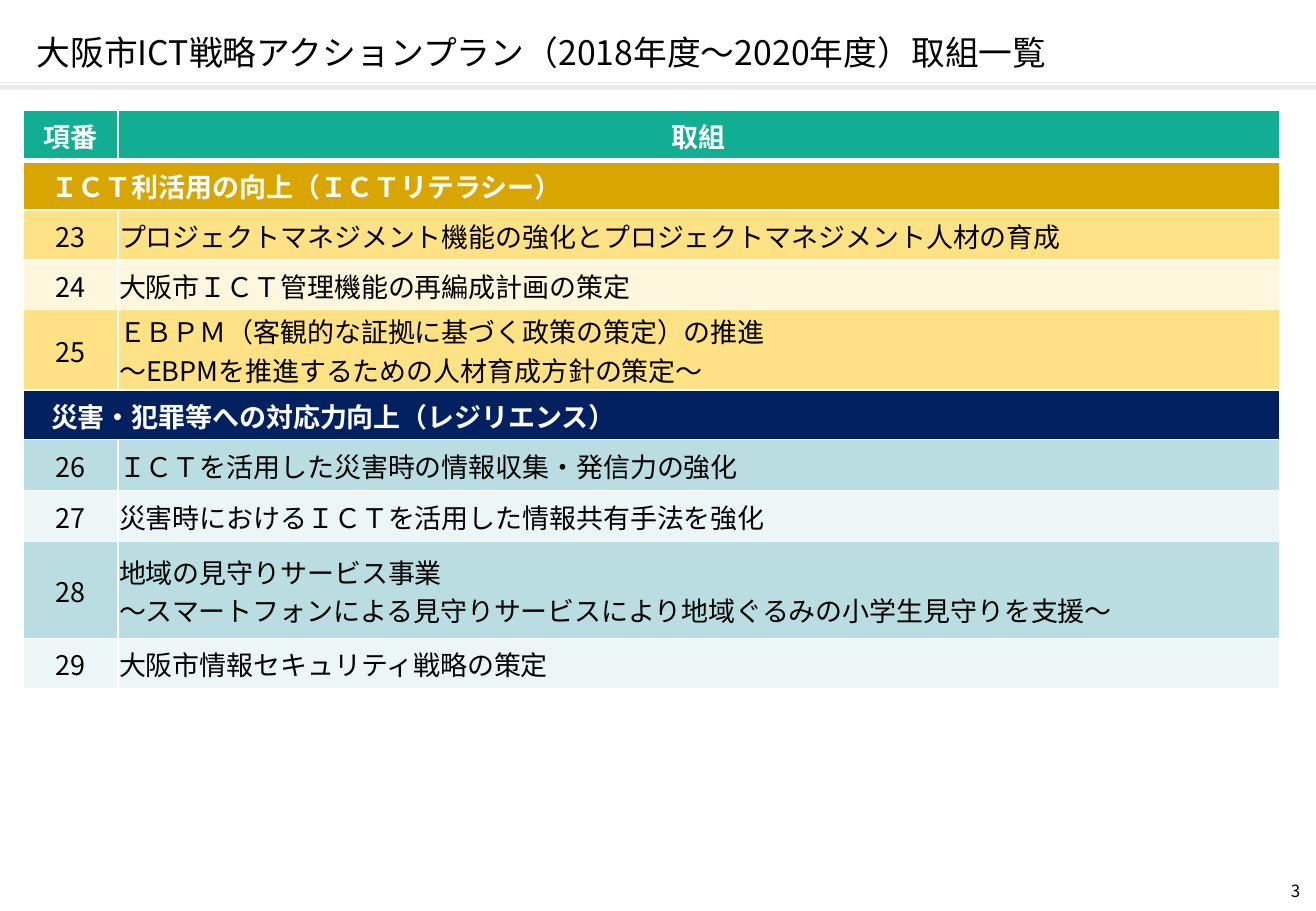
from lxml import etree
from pptx import Presentation
from pptx import util as u
from pptx.dml.color import RGBColor
from pptx.enum import shapes, text
from pptx.oxml import ns

FONT = "Noto Sans CJK JP"
YELLOWS = ("FFE285", "FFF7DD")
BLUES = ("BADDE1", "EDF6F7")
ROW_HEIGHTS = [0.41, 0.41, 0.41, 0.41, 0.66, 0.41, 0.42, 0.42, 0.8, 0.41]
SECTIONS = [
    ("ＩＣＴ利活用の向上（ＩＣＴリテラシー）", "D9A601", YELLOWS, [
        "プロジェクトマネジメント機能の強化とプロジェクトマネジメント人材の育成",
        "大阪市ＩＣＴ管理機能の再編成計画の策定",
        "ＥＢＰＭ（客観的な証拠に基づく政策の策定）の推進\n"
        "～EBPMを推進するための人材育成方針の策定～",
    ]),
    ("災害・犯罪等への対応力向上（レジリエンス）", "002060", BLUES, [
        "ＩＣＴを活用した災害時の情報収集・発信力の強化",
        "災害時におけるＩＣＴを活用した情報共有手法を強化",
        "地域の見守りサービス事業\n"
        "～スマートフォンによる見守りサービスにより地域ぐるみの小学生見守りを支援～",
        "大阪市情報セキュリティ戦略の策定",
    ]),
]


def rgb(value):
    """Turn a hex string into a colour."""
    return RGBColor.from_string(value)


def write(frame, content, size=16, color="000000", bold=False, align="LEFT"):
    """Fill a text frame, one paragraph for each line of the content."""
    frame.word_wrap = True
    frame.text = content
    for paragraph in frame.paragraphs:
        paragraph.alignment = getattr(text.PP_ALIGN, align)
        for run in paragraph.runs:
            run.font.name = FONT
            run.font.size = u.Pt(size)
            run.font.bold = bold
            run.font.color.rgb = rgb(color)
            east_asian = etree.SubElement(run.font._element, ns.qn("a:ea"))
            east_asian.set("typeface", FONT)


def set_insets(holder, left=0, top=0, right=0, bottom=0):
    """Set the inner margins of a text frame or cell."""
    holder.margin_left, holder.margin_top = u.Inches(left), u.Inches(top)
    holder.margin_right, holder.margin_bottom = u.Inches(right), u.Inches(bottom)


def add_borders(cell, **widths):
    """Give a cell white borders, one point wide unless stated by side."""
    properties = cell._tc.get_or_add_tcPr()
    for index, side in enumerate("LRTB"):
        border = etree.Element(ns.qn(f"a:ln{side}"), w=str(u.Pt(widths.get(side, 1))))
        fill = etree.SubElement(border, ns.qn("a:solidFill"))
        etree.SubElement(fill, ns.qn("a:srgbClr"), val="FFFFFF")
        properties.insert(index, border)


def fill_cell(cell, content, fill, left=0.01, borders=None, **style):
    """Write and colour one table cell."""
    write(cell.text_frame, content, **style)
    cell.vertical_anchor = text.MSO_ANCHOR.MIDDLE
    set_insets(cell, left, 0.01, 0.01)
    cell.fill.solid()
    cell.fill.fore_color.rgb = rgb(fill)
    add_borders(cell, **(borders or {}))


def add_heading(slide, left, top, width, height):
    """Place the title and the double rule below it."""
    rule_y = u.Inches(top + height)
    rule = slide.shapes.add_connector(
        shapes.MSO_CONNECTOR.STRAIGHT, u.Inches(left), rule_y, u.Inches(left + width), rule_y)
    rule.line.color.rgb = rgb("EAEAEA")
    rule.line.width = u.Pt(0.75)
    etree.SubElement(rule._element.spPr, ns.qn("a:effectLst"))

    band = slide.shapes.add_shape(
        shapes.MSO_SHAPE.RECTANGLE, u.Inches(left), u.Inches(top + height + 0.02),
        u.Inches(width), u.Inches(0.04))
    band.shadow.inherit = False
    band.fill.solid()
    band.fill.fore_color.rgb = rgb("EAEAEA")
    band.line.fill.background()

    title = slide.shapes.title
    title.left, title.top = u.Inches(left + 0.3), u.Inches(top + 0.21)
    title.width, title.height = u.Inches(9.92), u.Inches(0.43)
    frame = title.text_frame
    write(frame, "大阪市ICT戦略アクションプラン（2018年度～2020年度）取組一覧", size=20)
    set_insets(frame)
    frame.auto_size = text.MSO_AUTO_SIZE.NONE
    frame.vertical_anchor = text.MSO_ANCHOR.MIDDLE


def add_initiatives(slide, left, top, width, height):
    """Place the table of initiatives, grouped by section."""
    table = slide.shapes.add_table(
        len(ROW_HEIGHTS), 2, u.Inches(left), u.Inches(top),
        u.Inches(width), u.Inches(height)).table
    table.first_row = table.horz_banding = False
    number_width = 0.78
    table.columns[0].width = u.Inches(number_width)
    table.columns[1].width = u.Inches(width - number_width)
    for row, row_height in zip(table.rows, ROW_HEIGHTS):
        row.height = u.Inches(row_height)

    heading = {"color": "FFFFFF", "bold": True}
    for column, label in enumerate(("項番", "取組")):
        fill_cell(table.cell(0, column), label, "12AE94", align="CENTER",
                  borders={"B": 3}, **heading)
    row, number = 1, 23
    for name, section_fill, bands, initiatives in SECTIONS:
        section = table.cell(row, 0)
        section.merge(table.cell(row, 1))
        top_border = {"T": 3} if row == 1 else None
        fill_cell(section, name, section_fill, left=0.23, borders=top_border, **heading)
        add_borders(table.cell(row, 1), **(top_border or {}))
        row += 1
        for index, initiative in enumerate(initiatives):
            band = bands[index % 2]
            fill_cell(table.cell(row, 0), str(number), band, align="CENTER")
            fill_cell(table.cell(row, 1), initiative, band)
            row, number = row + 1, number + 1


def add_page_number(slide, left, top, width, height):
    """Place the page number at the lower right."""
    page = slide.shapes.add_textbox(
        u.Inches(left), u.Inches(top), u.Inches(width), u.Inches(height))
    write(page.text_frame, "3", size=10, align="RIGHT")
    set_insets(page.text_frame)


def main():
    """Build and save the slide."""
    deck = Presentation()
    deck.slide_width, deck.slide_height = u.Inches(10.83), u.Inches(7.5)
    slide = deck.slides.add_slide(deck.slide_layouts[5])
    add_heading(slide, 0, 0, 10.83, 0.68)
    add_initiatives(slide, 0.19, 0.91, 10.34, sum(ROW_HEIGHTS))
    add_page_number(slide, 8.17, 7.25, 2.53, 0.2)
    deck.save("out.pptx")


if __name__ == "__main__":
    main()
